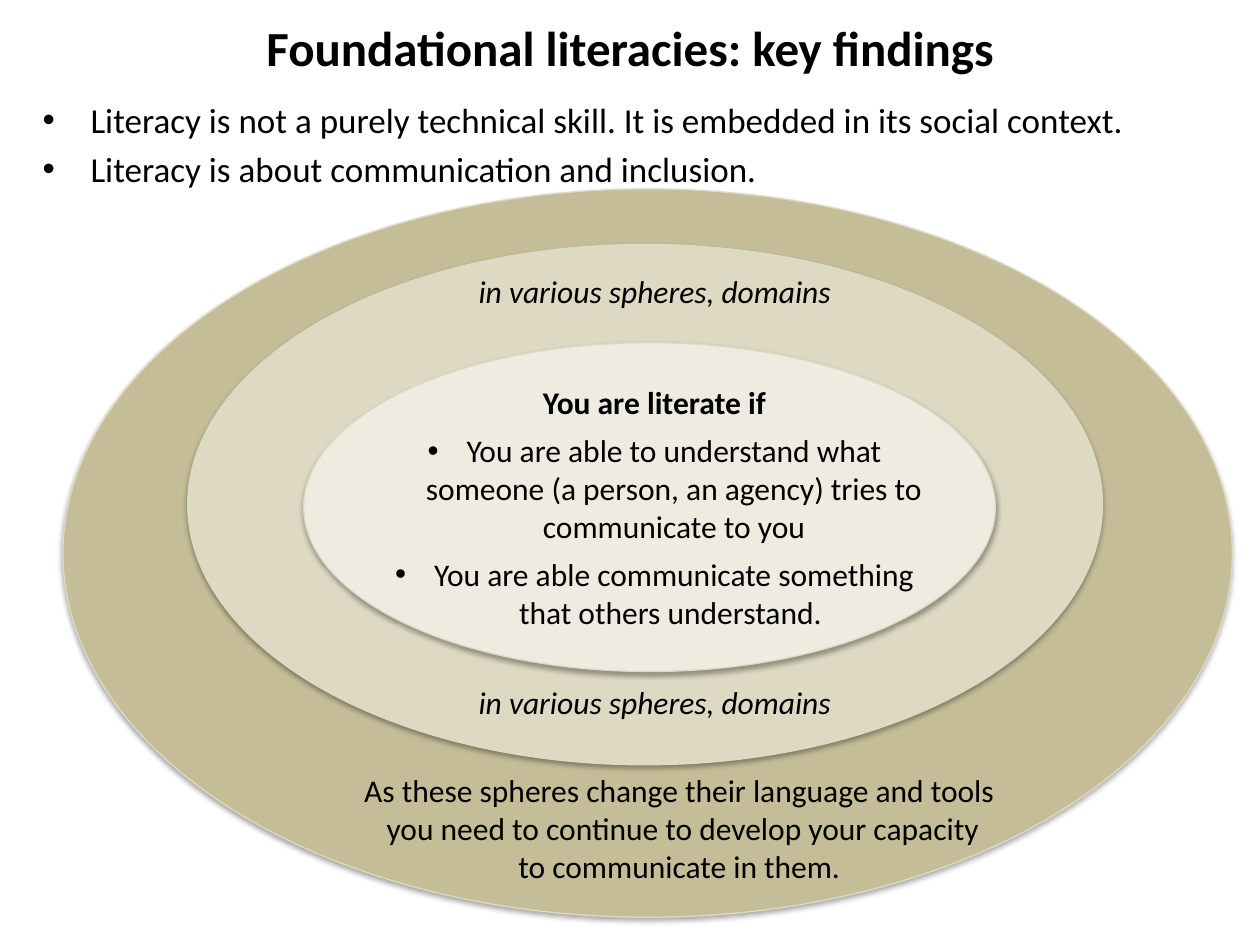
import dataclasses

import lxml.etree
import pptx
import pptx.dml.color
import pptx.enum.shapes
import pptx.enum.text
import pptx.oxml
import pptx.oxml.ns
import pptx.util

Inches, Pt = pptx.util.Inches, pptx.util.Pt
Color = pptx.dml.color.RGBColor.from_string
Align, Anchor = pptx.enum.text.PP_ALIGN, pptx.enum.text.MSO_ANCHOR
qn = pptx.oxml.ns.qn


@dataclasses.dataclass(frozen=True)
class Theme:
    font: str = "Calibri"
    ink: str = "000000"
    outer: str = "C4BD97"
    middle: str = "DDD9C3"
    inner: str = "EEECE1"
    outline: str = "DDD9C3"
    title_size: int = 28
    body_size: int = 20
    label_size: int = 18


theme = Theme()
SHADOW = (
    '<a:effectLst xmlns:a="http://schemas.openxmlformats.org/drawingml/2006/main">'
    '<a:outerShdw blurRad="%d" dist="%d" dir="5400000" rotWithShape="0">'
    '<a:srgbClr val="000000"><a:alpha val="35000"/></a:srgbClr>'
    '</a:outerShdw></a:effectLst>' % (Pt(3.1), Pt(1.8))
)


def write(box, lines, size=theme.label_size, bold=False, italic=False,
          align=Align.LEFT, indent=0, before=0, after=0):
    """Append paragraphs to a box; an indent above zero makes them bullets."""
    frame = box.text_frame
    frame.word_wrap = True
    for line in lines:
        para = frame.add_paragraph() if frame.text else frame.paragraphs[0]
        para.text = line
        para.alignment = align
        para.space_before, para.space_after = Pt(before), Pt(after)
        if indent:
            props = para._p.get_or_add_pPr()
            props.set("marL", str(Inches(indent)))
            props.set("indent", str(-Inches(indent)))
            lxml.etree.SubElement(props, qn("a:buFont")).set("typeface", "Arial")
            lxml.etree.SubElement(props, qn("a:buChar")).set("char", "•")
        for span in para.runs:
            span.font.name, span.font.size = theme.font, Pt(size)
            span.font.bold, span.font.italic = bold, italic
            span.font.color.rgb = Color(theme.ink)


deck = pptx.Presentation()
deck.slide_width, deck.slide_height = Inches(10), Inches(7.5)
page = deck.slides.add_slide(deck.slide_layouts[5])

# Title
title = page.shapes.title
title.left, title.top = Inches(0.5), Inches(0.03)
title.width, title.height = Inches(9), Inches(0.69)
title.text_frame.vertical_anchor = Anchor.MIDDLE
write(title, ["Foundational literacies: key findings"],
      size=theme.title_size, bold=True, align=Align.CENTER)

# Nested spheres, outermost first
spheres = [
    (theme.outer, (0.5, 1.5, 9.28, 5.78)),
    (theme.middle, (1.49, 1.94, 7.26, 4.13)),
    (theme.inner, (2.41, 2.72, 5.49, 2.61)),
]
for fill, place in spheres:
    sphere = page.shapes.add_shape(
        pptx.enum.shapes.MSO_SHAPE.OVAL, *map(Inches, place))
    sphere.fill.solid()
    sphere.fill.fore_color.rgb = Color(fill)
    sphere.line.color.rgb = Color(theme.outline)
    sphere.line.width = Pt(0.75)
    sphere._element.spPr.append(pptx.oxml.parse_xml(SHADOW))

# Key findings above the spheres
findings = page.shapes.add_textbox(*map(Inches, (0.24, 0.73, 9.09, 0.92)))
write(findings, [
    "Literacy is not a purely technical skill. It is embedded in its social context.",
    "Literacy is about communication and inclusion.",
], size=theme.body_size, indent=0.38, before=4)

# Definition in the innermost sphere
definition = page.shapes.add_textbox(*map(Inches, (2.83, 2.99, 4.73, 2.47)))
write(definition, ["You are literate if"], bold=True, align=Align.CENTER, after=6)
write(definition, [
    "You are able to understand what someone (a person, an agency) tries to "
    "communicate to you",
    "You are able communicate something that others understand. ",
], align=Align.CENTER, indent=0.31, after=6)

# The same label above and below the definition
for top in (2.11, 5.37):
    label = page.shapes.add_textbox(*map(Inches, (3.7, top, 3.5, 0.4)))
    write(label, ["in various spheres, domains"], italic=True)

# Conclusion in the outermost sphere
conclusion = page.shapes.add_textbox(*map(Inches, (2.41, 6.07, 6.02, 1.01)))
write(conclusion, [
    "As these spheres change their language and tools \n"
    "you need to continue to develop your capacity\n"
    "to communicate in them. ",
], align=Align.CENTER)

deck.save("out.pptx")
